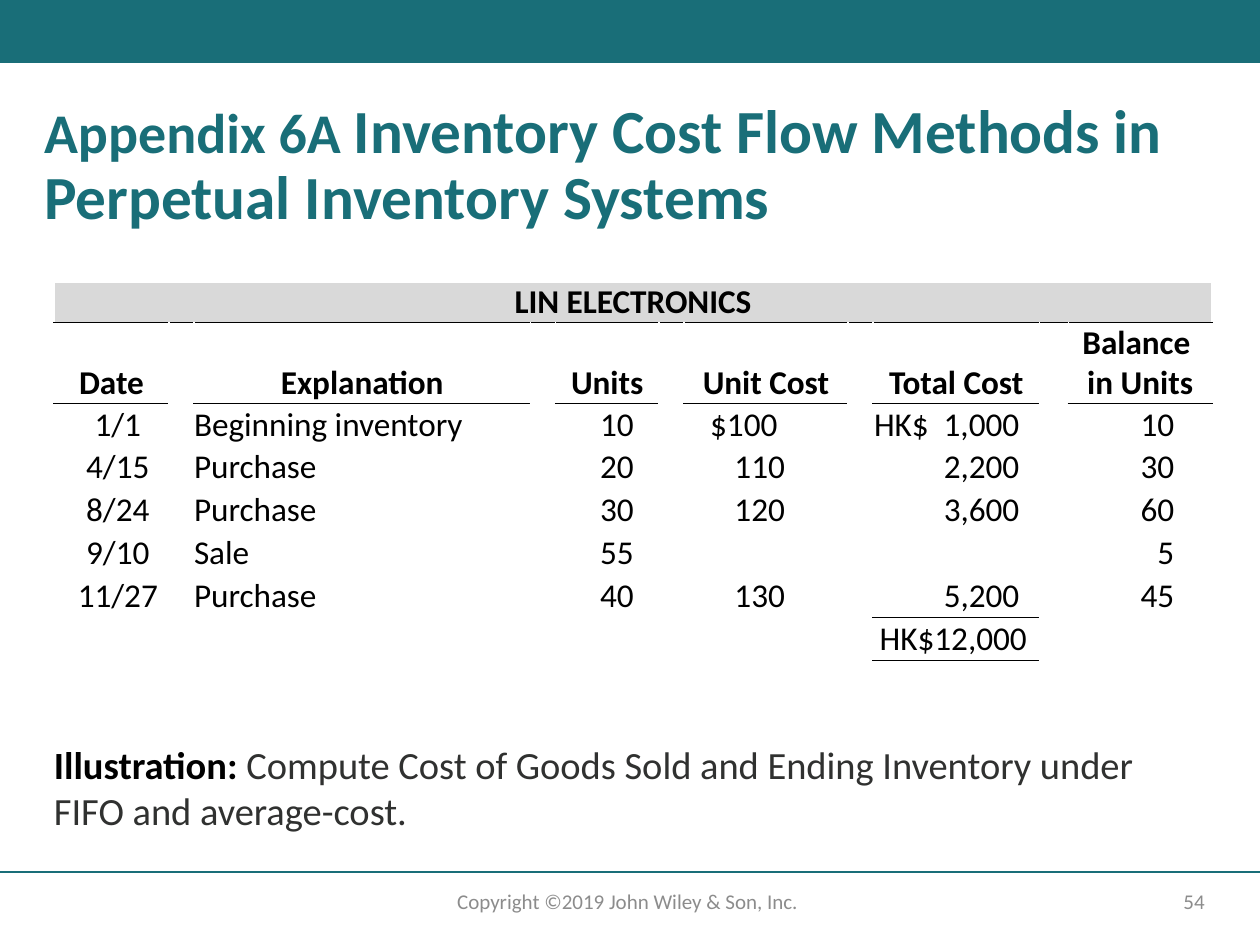
from dataclasses import dataclass

from lxml import etree
from pptx import Presentation
from pptx.dml.color import RGBColor
from pptx.enum.shapes import MSO_CONNECTOR, MSO_SHAPE
from pptx.enum.text import MSO_ANCHOR, MSO_AUTO_SIZE, PP_ALIGN
from pptx.oxml.ns import qn
from pptx.util import Inches, Pt

LEFT, CENTER, RIGHT = PP_ALIGN.LEFT, PP_ALIGN.CENTER, PP_ALIGN.RIGHT
TOP, MIDDLE, BOTTOM = MSO_ANCHOR.TOP, MSO_ANCHOR.MIDDLE, MSO_ANCHOR.BOTTOM


@dataclass(frozen=True)
class Theme:
    font: str = "Calibri"
    teal: str = "196E78"
    ink: str = "000000"
    body: str = "303130"
    muted: str = "8C8C8C"
    band: str = "D9D9D9"
    lead_size: int = 32
    title_size: int = 35
    body_size: int = 22
    table_size: int = 19
    footer_size: int = 12


THEME = Theme()
WIDTH, HEIGHT = 10, 7.5

# Content: (text, size, colour, bold) for each run
TITLE = [
    ("Appendix 6A ", THEME.lead_size, THEME.teal, True),
    ("Inventory Cost Flow Methods in Perpetual Inventory Systems",
     THEME.title_size, THEME.teal, True),
]
ILLUSTRATION = [
    ("Illustration: ", THEME.body_size, THEME.ink, True),
    ("Compute Cost of Goods Sold and Ending Inventory under FIFO and average-cost.",
     THEME.body_size, THEME.body, False),
]
COPYRIGHT = [("Copyright ©2019 John Wiley & Son, Inc. ",
              THEME.footer_size, THEME.muted, False)]
PAGE = [("54", THEME.footer_size, THEME.muted, False)]

COMPANY = "LIN ELECTRONICS"
# Heading, width, alignment, left inset, right inset
COLUMNS = [
    ("Date", 0.91, CENTER, 0.1, 0),
    ("Explanation", 2.67, LEFT, 0, 0),
    ("Units", 0.82, RIGHT, 0, 0.2),
    ("Unit Cost", 1.3, RIGHT, 0, 0.5),
    ("Total Cost", 1.32, RIGHT, 0, 0.1),
    ("Balance \nin Units", 1.14, RIGHT, 0, 0.3),
]
GAPS = [0.2, 0.2, 0.2, 0.2, 0.23]
ENTRIES = [
    ("1/1", "Beginning inventory", "10", "$100 ", "HK$  1,000 ", "10"),
    ("4/15", "Purchase", "20", "110", "2,200 ", "30"),
    ("8/24", "Purchase", "30", "120", "3,600 ", "60"),
    ("9/10", "Sale", "55", "", "", "5"),
    ("11/27", "Purchase", "40", "130", "5,200 ", "45"),
    ("", "", "", "", "HK$12,000 ", ""),
]
TOTAL_COLUMN = 8
TITLE_ROW, HEAD_ROW, FIRST_ENTRY = 0, 1, 2
TITLE_HEIGHT, HEAD_HEIGHT, ENTRY_HEIGHT = 0.32, 0.64, 0.34


def rgb(colour):
    return RGBColor.from_string(colour)


def format_font(font, size, colour, bold):
    font.name, font.size, font.bold = THEME.font, Pt(size), bold
    font.color.rgb = rgb(colour)


def write_runs(shape, runs, align=LEFT, anchor=TOP):
    frame = shape.text_frame
    frame.word_wrap = True
    frame.auto_size = MSO_AUTO_SIZE.NONE
    frame.vertical_anchor = anchor
    paragraph = frame.paragraphs[0]
    paragraph.alignment = align
    for text, *style in runs:
        run = paragraph.add_run()
        run.text = text
        format_font(run.font, *style)
    return paragraph


def add_text(slide, box, runs, align=LEFT, anchor=TOP):
    shape = slide.shapes.add_textbox(*map(Inches, box))
    write_runs(shape, runs, align, anchor)


def write_cell(cell, text, align, bold, insets=(0, 0, 0, 0)):
    (cell.margin_left, cell.margin_top,
     cell.margin_right, cell.margin_bottom) = map(Inches, insets)
    cell.vertical_anchor = BOTTOM
    cell.text_frame.text = text
    for paragraph in cell.text_frame.paragraphs:
        paragraph.alignment = align
        for run in paragraph.runs:
            format_font(run.font, THEME.table_size, THEME.ink, bold)


def add_border(cell, edge):
    """Draw one black edge; edges stand before the fill in a:tcPr."""
    properties = cell._tc.get_or_add_tcPr()
    line = etree.Element(qn(f"a:{edge}"), w=str(Pt(1)))
    fill = etree.SubElement(line, qn("a:solidFill"))
    etree.SubElement(fill, qn("a:srgbClr"), val=THEME.ink)
    properties.insert(len(properties.findall(qn("a:lnT"))), line)


def rule_below(table, row, column):
    add_border(table.cell(row, column), "lnB")
    if row + 1 < len(table.rows):
        add_border(table.cell(row + 1, column), "lnT")


def add_inventory_table(slide):
    widths = [COLUMNS[0][1]]
    for gap, column in zip(GAPS, COLUMNS[1:]):
        widths += [gap, column[1]]
    heights = [TITLE_HEIGHT, HEAD_HEIGHT] + [ENTRY_HEIGHT] * len(ENTRIES)
    table = slide.shapes.add_table(
        len(heights), len(widths), Inches(0.43), Inches(2.24),
        Inches(sum(widths)), Inches(sum(heights))).table
    table.first_row = table.horz_banding = False
    for column, width in zip(table.columns, widths):
        column.width = Inches(width)
    for row, height in zip(table.rows, heights):
        row.height = Inches(height)

    # Plain cells, then the text of each column
    for cell in table.iter_cells():
        cell.fill.background()
        write_cell(cell, "", LEFT, False)
    for index, (heading, _, align, left, right) in enumerate(COLUMNS):
        column = 2 * index
        write_cell(table.cell(HEAD_ROW, column), heading, CENTER, True)
        for row, entry in enumerate(ENTRIES, FIRST_ENTRY):
            write_cell(table.cell(row, column), entry[index], align, False,
                       (left, 0.01, right, 0.01))
        rule_below(table, HEAD_ROW, column)

    # Rules under the company name and around the total
    last_row, last_column = len(heights) - 1, len(widths) - 1
    for column in range(len(widths)):
        rule_below(table, TITLE_ROW, column)
    for row in (last_row - 1, last_row):
        rule_below(table, row, TOTAL_COLUMN)

    company = table.cell(TITLE_ROW, 0)
    company.merge(table.cell(TITLE_ROW, last_column))
    write_cell(company, COMPANY, CENTER, True)
    company.fill.solid()
    company.fill.fore_color.rgb = rgb(THEME.band)
    table.cell(last_row, 0).merge(table.cell(last_row, 2))


def add_frame(slide):
    bar = slide.shapes.add_shape(MSO_SHAPE.RECTANGLE, 0, 0, Inches(WIDTH), Inches(0.5))
    bar.shadow.inherit = False
    bar.fill.solid()
    bar.fill.fore_color.rgb = rgb(THEME.teal)
    bar.line.fill.background()

    rule_top = Inches(6.92)
    rule = slide.shapes.add_connector(
        MSO_CONNECTOR.STRAIGHT, 0, rule_top, Inches(WIDTH), rule_top)
    rule.line.color.rgb = rgb(THEME.teal)
    rule.line.width = Pt(1)
    etree.SubElement(rule._element.spPr, qn("a:effectLst"))

    add_text(slide, (7.06, 6.95, 2.6, 0.4), PAGE, RIGHT, MIDDLE)
    add_text(slide, (3.31, 6.95, 3.38, 0.4), COPYRIGHT, CENTER, MIDDLE)


def main():
    deck = Presentation()
    deck.slide_width, deck.slide_height = Inches(WIDTH), Inches(HEIGHT)
    slide = deck.slides.add_slide(deck.slide_layouts.get_by_name("Title Only"))
    add_frame(slide)

    title = slide.shapes.title
    title.left, title.top, title.width, title.height = map(
        Inches, (0.25, 0.75, 9.61, 1.16))
    write_runs(title, TITLE).line_spacing = 0.9

    add_text(slide, (0.33, 5.83, 9.17, 0.84), ILLUSTRATION)
    add_inventory_table(slide)
    deck.save("out.pptx")


if __name__ == "__main__":
    main()
